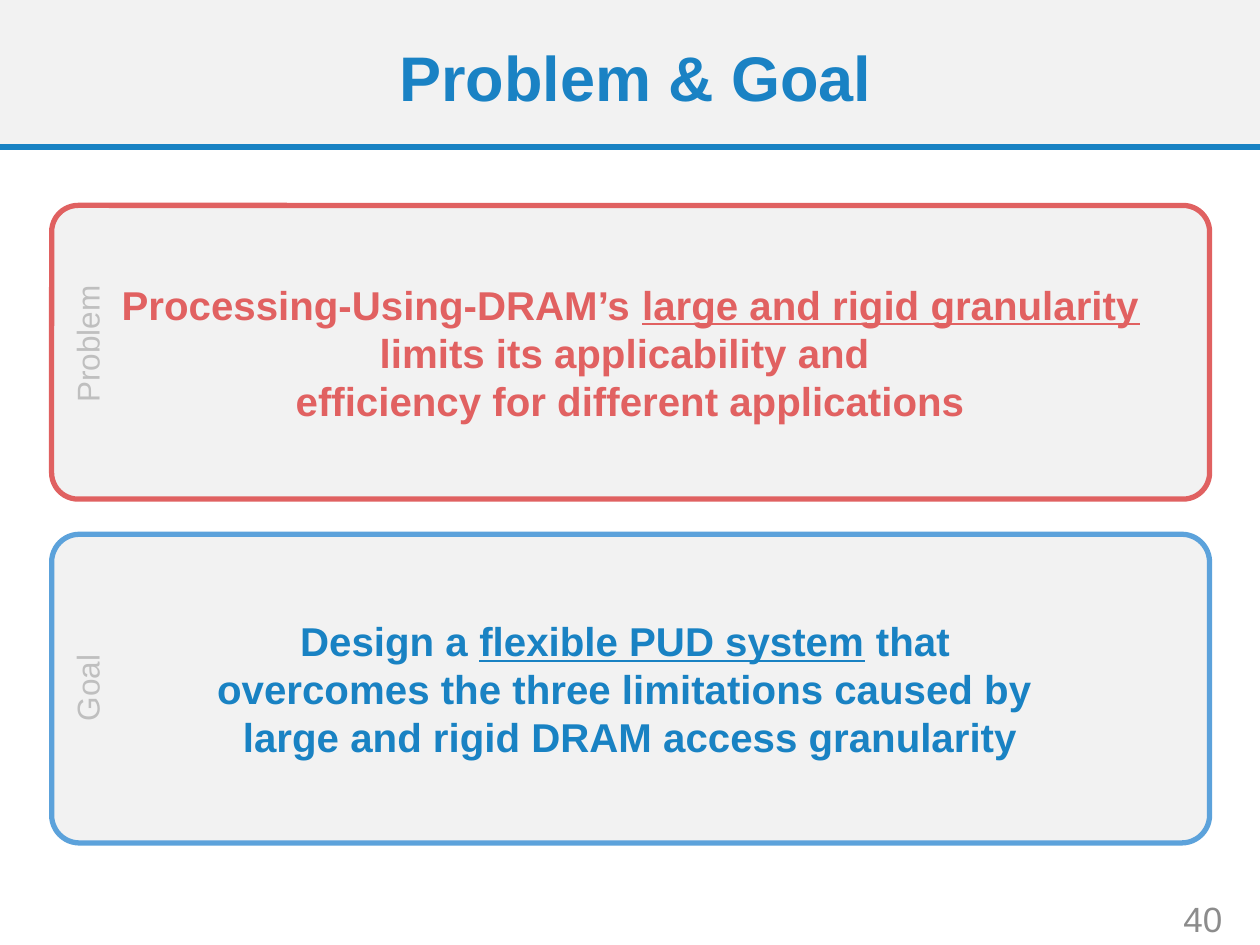
from lxml import etree
from pptx import Presentation
from pptx.dml.color import RGBColor
from pptx.enum.shapes import MSO_CONNECTOR, MSO_SHAPE
from pptx.enum.text import MSO_ANCHOR, PP_ALIGN
from pptx.oxml.ns import qn
from pptx.util import Pt

CENTER, RIGHT = PP_ALIGN.CENTER, PP_ALIGN.RIGHT
MIDDLE, TOP = MSO_ANCHOR.MIDDLE, MSO_ANCHOR.TOP
RECTANGLE, ROUNDED = MSO_SHAPE.RECTANGLE, MSO_SHAPE.ROUNDED_RECTANGLE
STRAIGHT = MSO_CONNECTOR.STRAIGHT

FONT = "Arial"
COLORS = {
    "panel": "F2F2F2",
    "title": "1A82C4",
    "blue": "1982C3",
    "light_blue": "5CA2DB",
    "red": "E16161",
    "red_border": "E06161",
    "label": "BFBFBF",
    "page_number": "8C8C8C",
}
SLIDE_WIDTH, SLIDE_HEIGHT = 720, 540
HEADER_HEIGHT = 84
CARD_LEFT, CARD_WIDTH = 29.5, 661.7
LABEL_CENTER, LABEL_HEIGHT = 49.8, 28.8


def color(name):
    return RGBColor.from_string(COLORS[name])


def write_text(shape, parts, *, size, fill, bold=False, align=CENTER,
               anchor=MIDDLE, line_spacing=None):
    """Write (text, underlined) parts as one paragraph; a newline is a line break."""
    frame = shape.text_frame
    frame.word_wrap = True
    frame.vertical_anchor = anchor
    paragraph = frame.paragraphs[0]
    paragraph.alignment = align
    paragraph.line_spacing = line_spacing
    for text, underlined in parts:
        for index, line in enumerate(text.split("\n")):
            if index:
                paragraph.add_line_break()
            if not line:
                continue
            run = paragraph.add_run()
            run.text = line
            run.font.name = FONT
            run.font.size = Pt(size)
            run.font.bold = bold
            run.font.underline = underlined
            run.font.color.rgb = color(fill)


def add_panel(slide, kind, left, top, width, height, border=None):
    shape = slide.shapes.add_shape(kind, Pt(left), Pt(top), Pt(width), Pt(height))
    shape.shadow.inherit = False
    shape.fill.solid()
    shape.fill.fore_color.rgb = color("panel")
    if border:
        shape.line.color.rgb = color(border)
        shape.line.width = Pt(3)
    else:
        shape.line.fill.background()
    return shape


def add_text_box(slide, text, left, top, width, height, **text_format):
    box = slide.shapes.add_textbox(Pt(left), Pt(top), Pt(width), Pt(height))
    write_text(box, [(text, False)], **text_format)
    return box


def add_header(slide, text):
    band = add_panel(slide, RECTANGLE, 0, 0, SLIDE_WIDTH, HEADER_HEIGHT)
    title = slide.shapes.title
    title._element.addprevious(band._element)

    rule = slide.shapes.add_connector(
        STRAIGHT, 0, Pt(HEADER_HEIGHT), Pt(SLIDE_WIDTH), Pt(HEADER_HEIGHT))
    rule.line.color.rgb = color("blue")
    rule.line.width = Pt(3)
    etree.SubElement(rule._element.spPr, qn("a:effectLst"))

    title.left, title.top = Pt(13), Pt(10)
    title.width, title.height = Pt(700.5), Pt(72.7)
    write_text(title, [(text, False)], size=36, fill="title", bold=True,
               line_spacing=0.9)


def add_card(slide, label, parts, top, height, label_middle, label_length,
             border, fill):
    """Add a rounded card with a label that reads upwards along its left side."""
    card = add_panel(slide, ROUNDED, CARD_LEFT, top, CARD_WIDTH, height, border)
    card.adjustments[0] = 0.09
    write_text(card, parts, size=23, fill=fill, bold=True)

    box = add_text_box(
        slide, label, LABEL_CENTER - label_length / 2,
        label_middle - LABEL_HEIGHT / 2, label_length, LABEL_HEIGHT,
        size=18, fill="label", anchor=TOP)
    box.rotation = 270


def main():
    presentation = Presentation()
    presentation.slide_width = Pt(SLIDE_WIDTH)
    presentation.slide_height = Pt(SLIDE_HEIGHT)
    slide = presentation.slides.add_slide(presentation.slide_layouts[5])

    add_header(slide, "Problem & Goal")
    add_card(
        slide, "Problem",
        [("Processing-Using-DRAM’s ", False),
         ("large and rigid granularity", True),
         ("\nlimits its applicability and \n"
          "efficiency for different applications", False)],
        top=117.4, height=167.8, label_middle=196.6, label_length=160,
        border="red_border", fill="red")
    add_card(
        slide, "Goal",
        [("Design a ", False),
         ("flexible PUD system", True),
         (" that \novercomes the three limitations caused by \n"
          "large and rigid DRAM access granularity", False)],
        top=305.3, height=176.4, label_middle=393.1, label_length=176.4,
        border="light_blue", fill="blue")
    add_text_box(slide, "40", 627.8, 510.5, 77.8, 28.8,
                 size=20, fill="page_number", align=RIGHT)

    presentation.save("out.pptx")


if __name__ == "__main__":
    main()
